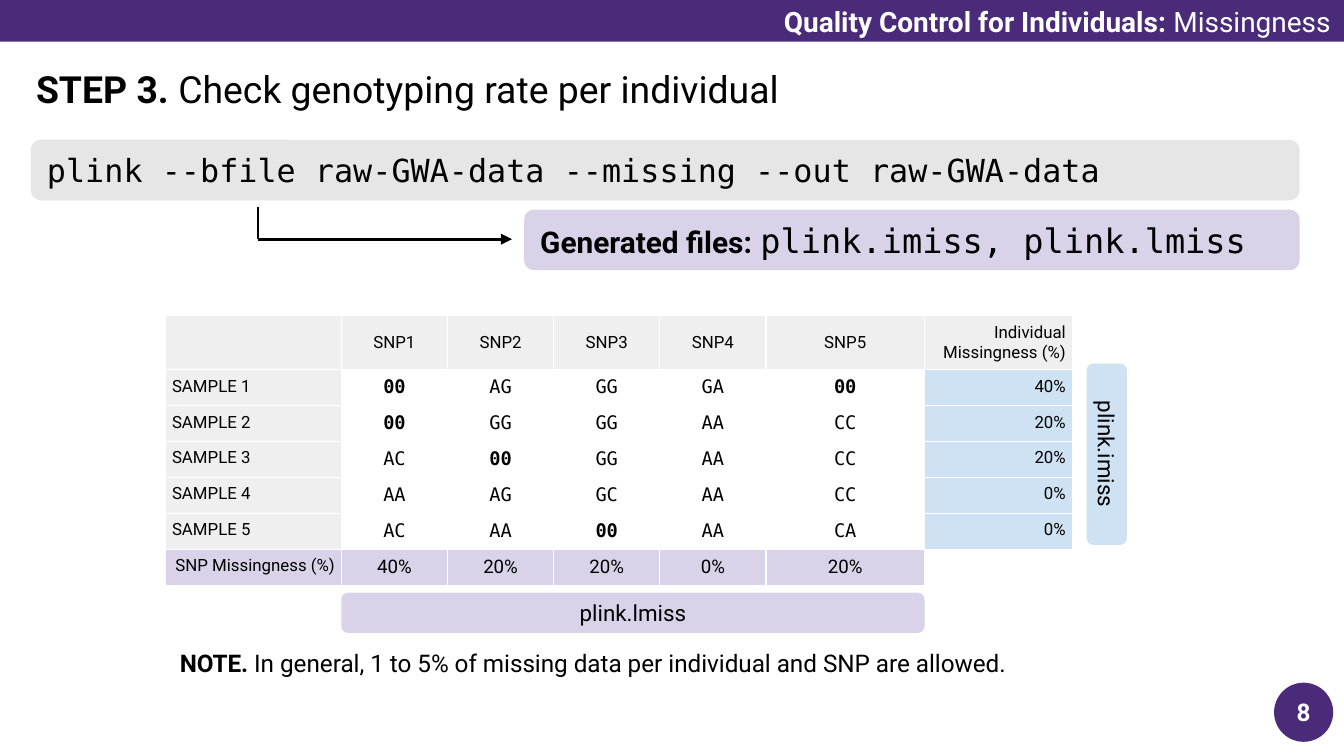
from collections import namedtuple
from dataclasses import dataclass

from lxml import etree
from pptx import Presentation
from pptx.dml.color import RGBColor
from pptx.enum.shapes import MSO_CONNECTOR, MSO_SHAPE
from pptx.enum.text import MSO_ANCHOR, PP_ALIGN
from pptx.oxml.ns import qn
from pptx.util import Inches, Pt

LEFT, CENTER, RIGHT = PP_ALIGN.LEFT, PP_ALIGN.CENTER, PP_ALIGN.RIGHT
TOP, MIDDLE = MSO_ANCHOR.TOP, MSO_ANCHOR.MIDDLE
RECT, ROUNDED, OVAL = MSO_SHAPE.RECTANGLE, MSO_SHAPE.ROUNDED_RECTANGLE, MSO_SHAPE.OVAL
STRAIGHT = MSO_CONNECTOR.STRAIGHT

Box = namedtuple("Box", "left top width height")
Style = namedtuple("Style", "size bold font color", defaults=(False, "Roboto", "000000"))


@dataclass(frozen=True)
class Theme:
    """Colours, fonts and type sizes of the slide."""
    purple: str = "4A2B79"
    lilac: str = "D9D2E9"
    blue: str = "CFE2F3"
    code_gray: str = "E7E6E6"
    cell_gray: str = "EFEFEF"
    white: str = "FFFFFF"
    black: str = "000000"
    mono: str = "DejaVu Sans Mono"
    title: int = 20
    files: int = 18
    command: int = 17
    files_label: int = 16
    banner: int = 15
    note: int = 13
    tag: int = 12
    genotype: int = 10
    cell: int = 9


THEME = Theme()
SNPS = ["SNP1", "SNP2", "SNP3", "SNP4", "SNP5"]
GENOTYPES = ["00 AG GG GA 00", "00 GG GG AA CC", "AC 00 GG AA CC",
             "AA AG GC AA CC", "AC AA 00 AA CA"]
SAMPLE_MISSINGNESS = ["40%", "20%", "20%", "0%", "0%"]
SNP_MISSINGNESS = ["40%", "20%", "20%", "0%", "20%"]
COLUMN_WIDTHS = [1.31, 0.79, 0.79, 0.79, 0.79, 1.18, 1.1]
ROWS_HEIGHT = 1.86


def inches(box):
    """Convert a box to slide lengths."""
    return [Inches(length) for length in box]


def write(frame, pieces, align=LEFT, anchor=MIDDLE, inset=0.1):
    """Fill a text frame with one paragraph of (text, style) pieces."""
    frame.word_wrap = True
    frame.vertical_anchor = anchor
    frame.margin_left = frame.margin_right = Inches(0.1)
    frame.margin_top = frame.margin_bottom = Inches(inset)
    paragraph = frame.paragraphs[0]
    paragraph.alignment = align
    for text, style in pieces:
        run = paragraph.add_run()
        run.text = text
        run.font.size = Pt(style.size)
        run.font.bold = style.bold
        run.font.name = style.font
        run.font.color.rgb = RGBColor.from_string(style.color)
    return paragraph


def add_panel(slide, kind, box, fill, pieces, align=LEFT, inset=0.1):
    """Add a flat shape with text, filled if a colour is given."""
    panel = slide.shapes.add_shape(kind, *inches(box))
    panel.shadow.inherit = False
    if fill:
        panel.fill.solid()
        panel.fill.fore_color.rgb = RGBColor.from_string(fill)
    else:
        panel.fill.background()
    panel.line.fill.background()
    write(panel.text_frame, pieces, align, MIDDLE, inset)
    return panel


def add_text(slide, box, pieces, align, anchor):
    """Add a plain text box."""
    frame = slide.shapes.add_textbox(*inches(box)).text_frame
    write(frame, pieces, align, anchor, 0.05)


def add_line(slide, start, end, arrow=False):
    """Add a black straight line, with an optional arrowhead."""
    line = slide.shapes.add_connector(STRAIGHT, *inches(start + end))
    line.line.color.rgb = RGBColor.from_string(THEME.black)
    line.line.width = Pt(1.5)
    if arrow:
        etree.SubElement(line.line._get_or_add_ln(), qn("a:tailEnd"), type="triangle")
    etree.SubElement(line._element.spPr, qn("a:effectLst"))


def add_banner(slide, box):
    """Place the section banner."""
    add_panel(slide, RECT, box, THEME.purple, [
        ("Quality Control for Individuals:", Style(THEME.banner, True, color=THEME.white)),
        (" Missingness", Style(THEME.banner, color=THEME.white))], RIGHT, 0.05)


def add_command(slide, box):
    """Place the command, the bent arrow and the files it generates."""
    left, top, width, height = box
    bar_height, files_left, files_top = 0.45, left + 3.67, top + 0.52
    add_panel(slide, ROUNDED, Box(left, top, width, bar_height), THEME.code_gray, [
        ("plink --bfile raw-GWA-data --missing --out raw-GWA-data",
         Style(THEME.command, font=THEME.mono))])
    add_panel(slide, ROUNDED,
              Box(files_left, files_top, left + width - files_left, top + height - files_top),
              THEME.lilac,
              [("Generated files:", Style(THEME.files_label, True)),
               (" ", Style(THEME.files)),
               ("plink.imiss, plink.lmiss", Style(THEME.files, font=THEME.mono))])
    bend = (left + 1.69, files_top + 0.22)
    add_line(slide, (bend[0], top + 0.5), bend)
    add_line(slide, bend, (files_left - 0.09, bend[1]), arrow=True)


def fill_cell(cell, text, style, align, fill=None, anchor=TOP):
    """Format one table cell, with white borders."""
    paragraph = write(cell.text_frame, [(text, style)] if text else [], align)
    cell.vertical_anchor = anchor
    cell.margin_left = cell.margin_right = Inches(0.05)
    cell.margin_top = cell.margin_bottom = Inches(0.05)
    if not text:
        etree.SubElement(paragraph._p, qn("a:endParaRPr"), sz=str(style.size * 100))
    properties = cell._tc.get_or_add_tcPr()
    for side in ("lnL", "lnR", "lnT", "lnB"):
        border = etree.SubElement(properties, qn(f"a:{side}"), w=str(Pt(0.75)))
        solid = etree.SubElement(border, qn("a:solidFill"))
        etree.SubElement(solid, qn("a:srgbClr"), val=THEME.white)
    if fill:
        cell.fill.solid()
        cell.fill.fore_color.rgb = RGBColor.from_string(fill)
    else:
        cell.fill.background()


def add_genotype_table(slide, box):
    """Place the genotype table with its missingness row and column."""
    rows = [["", *SNPS, "Individual Missingness (%)"]]
    for number, (calls, rate) in enumerate(zip(GENOTYPES, SAMPLE_MISSINGNESS), 1):
        rows.append([f"SAMPLE {number}", *calls.split(), rate])
    rows.append(["SNP Missingness (%)", *SNP_MISSINGNESS, ""])
    last_row, last_column = len(rows) - 1, len(COLUMN_WIDTHS) - 1

    frame = slide.shapes.add_table(len(rows), len(COLUMN_WIDTHS), *inches(box))
    table = frame.table
    table.first_row = table.horz_banding = False
    for column, width in zip(table.columns, COLUMN_WIDTHS):
        column.width = Inches(width)
    for r, values in enumerate(rows):
        table.rows[r].height = Inches(ROWS_HEIGHT / len(rows))
        for c, text in enumerate(values):
            style, align, fill = Style(THEME.cell), CENTER, None
            if c == last_column or (r == last_row and c == 0):
                align = RIGHT
            elif c == 0:
                align = LEFT
            if r == last_row:
                fill = THEME.lilac if c < last_column else None
                style = Style(THEME.genotype if c else THEME.cell)
            elif r == 0 or c == 0:
                fill = THEME.cell_gray
            elif c == last_column:
                fill = THEME.blue
            else:
                style = Style(THEME.genotype, text == "00", THEME.mono)
            fill_cell(table.cell(r, c), text, style, align, fill, TOP if r else MIDDLE)
    frame.height = Inches(box.height)


def add_file_tags(slide, box):
    """Label the table's missingness row and column with their files."""
    thickness, length = 0.3, 1.35
    tag = Style(THEME.tag)
    add_panel(slide, ROUNDED,
              Box(box.left + COLUMN_WIDTHS[0], box.top + box.height + 0.06,
                  sum(COLUMN_WIDTHS[1:-1]), thickness),
              THEME.lilac, [("plink.lmiss", tag)], CENTER)
    side_tag = add_panel(slide, ROUNDED,
                         Box(box.left + box.width - 0.42, box.top + 0.88, length, thickness),
                         THEME.blue, [("plink.imiss", tag)], CENTER)
    side_tag.rotation = 90


def add_note(slide, box):
    """Place the note on the allowed missing data."""
    note = add_panel(slide, ROUNDED, box, None, [
        ("NOTE.", Style(THEME.note, True)),
        (" In general, 1 to 5% of missing data per individual and SNP are allowed.",
         Style(THEME.note))])
    note.adjustments[0] = 0.1
    note.text_frame.paragraphs[0].line_spacing = 1.15


def add_page_number(slide, box):
    """Place the page number on its disc."""
    add_panel(slide, OVAL, box, THEME.purple, [])
    add_text(slide, box, [("8", Style(THEME.note, True, color=THEME.white))], CENTER, MIDDLE)


def build():
    """Build and save the slide."""
    deck = Presentation()
    deck.slide_width = Inches(10)
    deck.slide_height = deck.slide_width * 9 // 16
    slide = deck.slides.add_slide(deck.slide_layouts[6])
    add_text(slide, Box(0.17, 0.44, 5.84, 0.33), [
        ("STEP 3. ", Style(THEME.title, True)),
        ("Check genotyping rate per individual", Style(THEME.title))], LEFT, TOP)
    add_command(slide, Box(0.23, 1.04, 9.44, 0.97))
    table_box = Box(1.23, 2.35, 6.75, 2)
    add_note(slide, Box(1.23, 4.75, 6.48, 0.33))
    add_genotype_table(slide, table_box)
    add_file_tags(slide, table_box)
    add_page_number(slide, Box(9.48, 5.08, 0.44, 0.44))
    add_banner(slide, Box(0, 0, 10, 0.31))
    deck.save("out.pptx")


if __name__ == "__main__":
    build()
